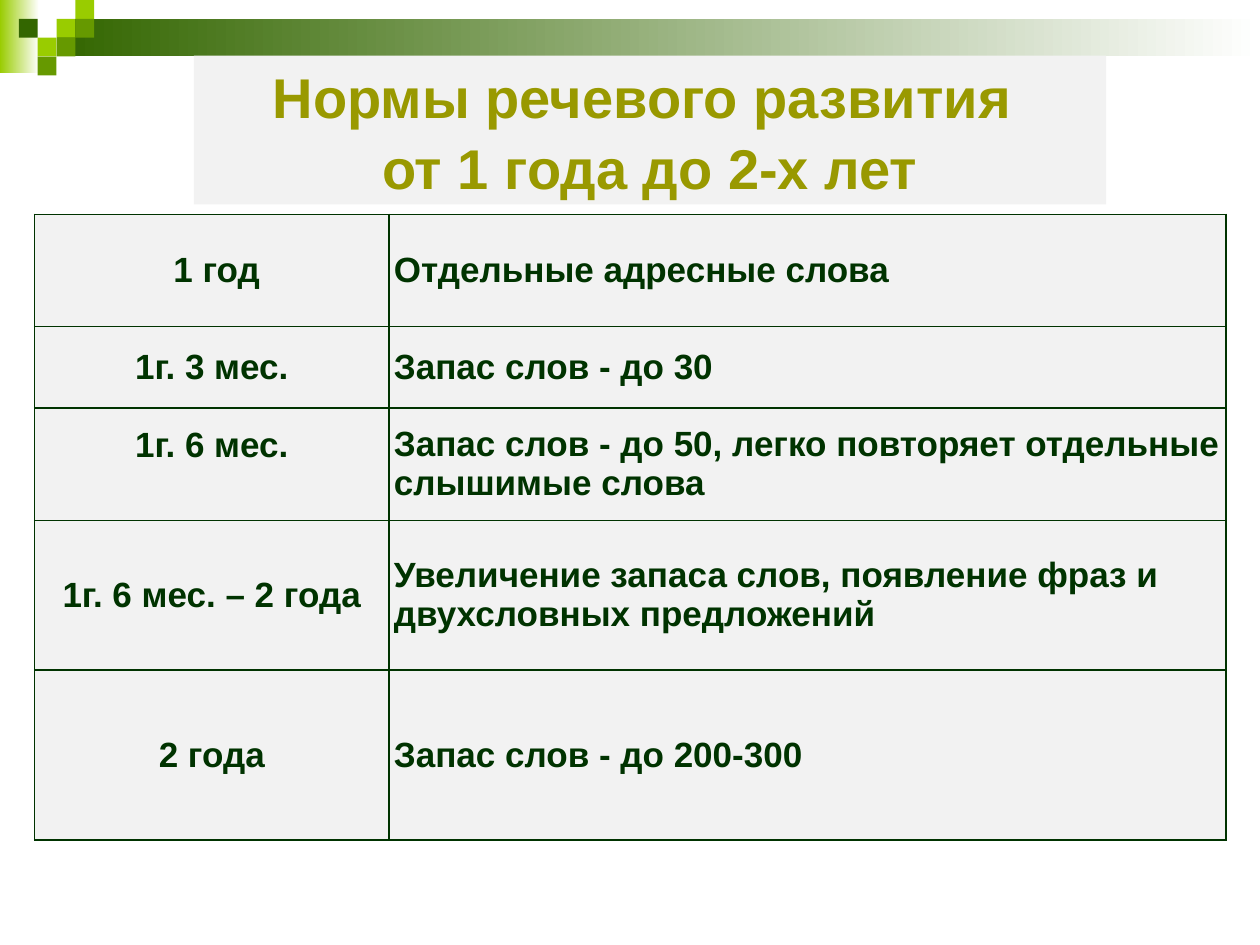
from dataclasses import dataclass

from lxml import etree
from pptx import Presentation
from pptx.dml.color import RGBColor
from pptx.enum.shapes import MSO_SHAPE
from pptx.enum.text import MSO_ANCHOR, MSO_AUTO_SIZE, PP_ALIGN
from pptx.oxml.ns import qn
from pptx.util import Cm, Pt

RECT = MSO_SHAPE.RECTANGLE
MIDDLE = MSO_ANCHOR.MIDDLE
CENTER, LEFT = PP_ALIGN.CENTER, PP_ALIGN.LEFT
NO_AUTOFIT = MSO_AUTO_SIZE.NONE


@dataclass(frozen=True)
class Theme:
    font: str = "Arial"
    title_size: int = 32
    body_size: int = 20
    title: str = "999900"
    text: str = "003300"
    panel: str = "F2F2F2"
    white: str = "FFFFFF"
    lime: str = "99CC00"
    green: str = "669900"
    dark: str = "336600"
    border: int = 1


THEME = Theme()
STEP = 0.38
SQUARES = [
    (2, 1, THEME.lime), (3, 0, THEME.lime), (3, 1, THEME.green),
    (1, 2, THEME.lime), (0, 1, THEME.dark), (2, 2, THEME.green),
    (1, 3, THEME.green),
]
TITLE = ["Нормы речевого развития ", "от 1 года до 2-х лет"]
NORMS = [
    (" 1 год", "Отдельные адресные слова"),
    ("1г. 3 мес.", "Запас слов - до 30"),
    ("1г. 6 мес.",
     "Запас слов - до 50, легко повторяет отдельные слышимые слова"),
    ("1г. 6 мес. – 2 года",
     "Увеличение запаса слов, появление фраз и двухсловных предложений"),
    ("2 года", "Запас слов - до 200-300"),
]
COL_WIDTHS = [7.14, 16.87]
ROW_HEIGHTS = [2.26, 1.65, 2.26, 3.02, 3.43]


def set_attrs(obj, values):
    for name, value in values.items():
        setattr(obj, name, value)


class SlideBuilder:
    def __init__(self, slide, theme):
        self.s = slide
        self.theme = theme

    def fill(self, obj, color):
        obj.fill.solid()
        obj.fill.fore_color.rgb = RGBColor.from_string(color)

    def text(self, p, text, size, color, align):
        p.alignment = align
        r = p.add_run()
        r.text = text
        set_attrs(r.font, {"name": self.theme.font, "size": Pt(size), "bold": True})
        r.font.color.rgb = RGBColor.from_string(color)

    def rect(self, left, top, width, height, color):
        sp = self.s.shapes.add_shape(RECT, Cm(left), Cm(top), Cm(width), Cm(height))
        sp.shadow.inherit = False
        sp.line.fill.background()
        self.fill(sp, color)
        return sp

    def fading_rect(self, left, top, width, height, color):
        sp = self.rect(left, top, width, height, color)
        sp.fill.gradient()
        sp.fill.gradient_angle = 0
        stops = zip(sp.fill.gradient_stops, (color, self.theme.white), (0, 1))
        for stop, tone, position in stops:
            stop.color.rgb = RGBColor.from_string(tone)
            stop.position = position

    def title(self, lines, left, top, width, height):
        sp = self.s.shapes.title
        sp.element.getparent().append(sp.element)
        set_attrs(sp, {"left": Cm(left), "top": Cm(top),
                       "width": Cm(width), "height": Cm(height)})
        self.fill(sp, self.theme.panel)
        tf = sp.text_frame
        set_attrs(tf, {"word_wrap": True, "auto_size": NO_AUTOFIT,
                       "vertical_anchor": MIDDLE})
        for i, line in enumerate(lines):
            p = tf.add_paragraph() if i else tf.paragraphs[0]
            p.line_spacing = 1.05
            self.text(p, line, self.theme.title_size, self.theme.title, CENTER)

    def borders(self, cell):
        tc_pr = cell._tc.get_or_add_tcPr()
        for side in ("a:lnL", "a:lnR", "a:lnT", "a:lnB"):
            ln = etree.SubElement(tc_pr, qn(side), w=str(Pt(self.theme.border)))
            solid = etree.SubElement(ln, qn("a:solidFill"))
            etree.SubElement(solid, qn("a:srgbClr"), val=self.theme.text)

    def table(self, rows, left, top, widths, heights):
        frame = self.s.shapes.add_table(
            len(rows), len(widths), Cm(left), Cm(top),
            Cm(sum(widths)), Cm(sum(heights)))
        table = frame.table
        set_attrs(table, {"first_row": False, "horz_banding": False})
        for col, width in zip(table.columns, widths):
            col.width = Cm(width)
        for row, height, texts in zip(table.rows, heights, rows):
            row.height = Cm(height)
            for cell, text, align in zip(row.cells, texts, (CENTER, LEFT)):
                set_attrs(cell, {"vertical_anchor": MIDDLE,
                                 "margin_left": Cm(0.1), "margin_right": Cm(0.1),
                                 "margin_top": Cm(0.08), "margin_bottom": Cm(0.08)})
                self.borders(cell)
                self.fill(cell, self.theme.panel)
                self.text(cell.text_frame.paragraphs[0], text,
                          self.theme.body_size, self.theme.text, align)
        return table


def main():
    prs = Presentation()
    set_attrs(prs, {"slide_width": Cm(25.4), "slide_height": Cm(19.05)})
    slide = SlideBuilder(prs.slides.add_slide(prs.slide_layouts[5]), THEME)

    slide.fading_rect(0, 0, 0.79, 1.47, THEME.lime)
    slide.fading_rect(3 * STEP, STEP, 25.4 - 3 * STEP, 2 * STEP, THEME.dark)
    for col, row, color in SQUARES:
        slide.rect((col + 1) * STEP, row * STEP, STEP, STEP, color)

    slide.title(TITLE, 3.91, 1.12, 18.39, 3)
    table = slide.table(NORMS, 0.7, 4.32, COL_WIDTHS, ROW_HEIGHTS)
    table.cell(2, 0).margin_bottom = Cm(0.85)

    prs.save("out.pptx")


if __name__ == "__main__":
    main()
